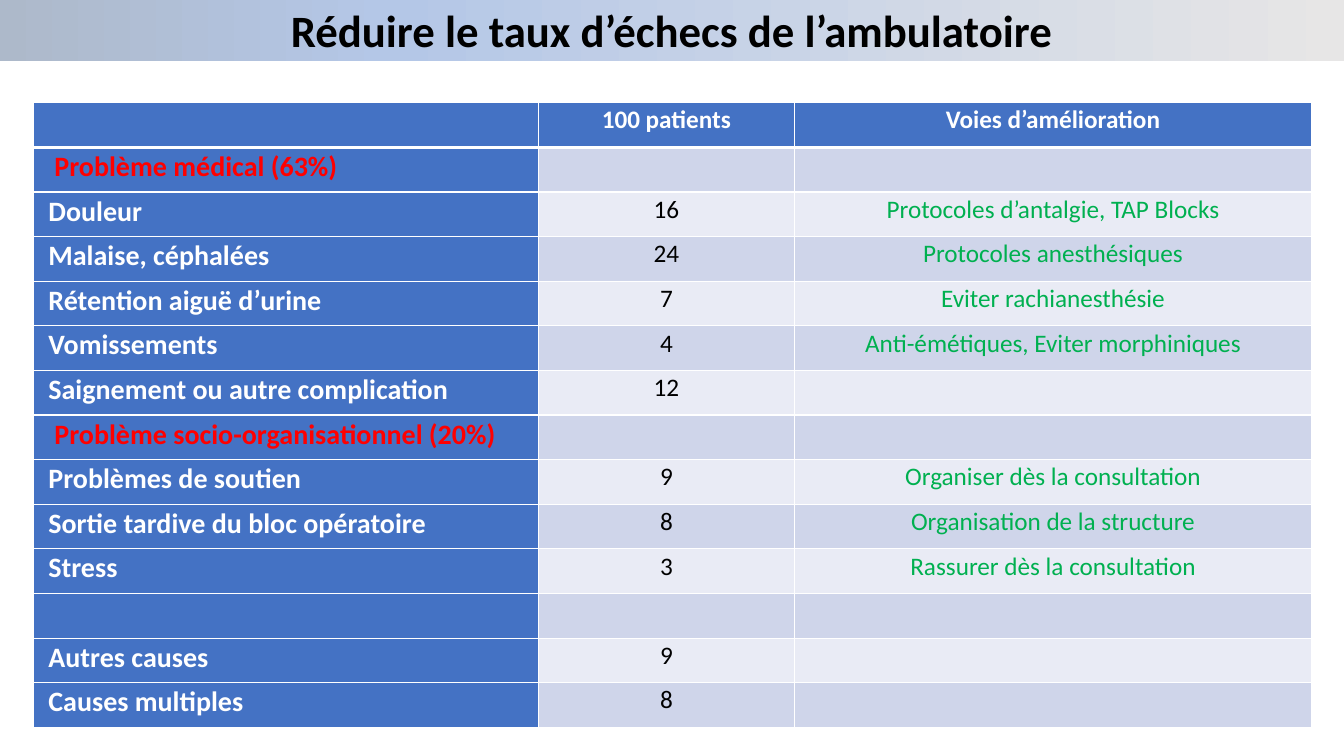
from lxml.etree import SubElement
from pptx import Presentation
from pptx.dml.color import RGBColor
from pptx.enum.text import MSO_ANCHOR, MSO_AUTO_SIZE, PP_ALIGN
from pptx.oxml.ns import qn
from pptx.util import Inches, Pt

CENTER, JUSTIFY = PP_ALIGN.CENTER, PP_ALIGN.JUSTIFY
MIDDLE, FIXED = MSO_ANCHOR.MIDDLE, MSO_AUTO_SIZE.NONE
COLORS = {"blue": "4472C4", "dark": "CFD5EA", "light": "E9EBF5", "white": "FFFFFF",
          "black": "000000", "red": "FF0000", "green": "00B050"}
FADE = [(0, "ADB9CA"), (29, "B4C7E7"), (100, "E7E6E6")]
FORMATS = {
    "title": {"name": "Calibri", "size": Pt(32), "bold": True, "color": "black"},
    "head": {"name": "Calibri", "size": Pt(18), "bold": True, "color": "white"},
    "group": {"name": "Calibri", "size": Pt(20), "bold": True, "color": "red"},
    "cause": {"name": "Calibri", "size": Pt(20), "bold": True, "color": "white"},
    "count": {"name": "Calibri", "size": Pt(18), "bold": False, "color": "black"},
    "remedy": {"name": "Calibri", "size": Pt(18), "bold": False, "color": "green"},
}
WIDTHS = [5.01, 2.54, 5.13]
ROWS = [
    ("", "100 patients", "Voies d’amélioration"),
    ("Problème médical (63%)", "", ""),
    ("Douleur", "16", "Protocoles d’antalgie, TAP Blocks"),
    ("Malaise, céphalées", "24", "Protocoles anesthésiques"),
    ("Rétention aiguë d’urine", "7", "Eviter rachianesthésie"),
    ("Vomissements", "4", "Anti-émétiques, Eviter morphiniques"),
    ("Saignement ou autre complication", "12", ""),
    ("Problème socio-organisationnel (20%)", "", ""),
    ("Problèmes de soutien", "9", "Organiser dès la consultation"),
    ("Sortie tardive du bloc opératoire", "8", "Organisation de la structure"),
    ("Stress", "3", "Rassurer dès la consultation"),
    ("", "", ""),
    ("Autres causes", "9", ""),
    ("Causes multiples", "8", ""),
]


def write(para, text, kind, align):
    """Put one formatted run in a paragraph."""
    para.alignment = align
    run = para.add_run()
    run.text = text
    for key, value in FORMATS[kind].items():
        if key == "color":
            run.font.color.rgb = RGBColor.from_string(COLORS[value])
        else:
            setattr(run.font, key, value)


def add_title(slide, left, top, width, height):
    """Place the title band with its horizontal fade."""
    title = slide.shapes.title
    box = {"left": left, "top": top, "width": width, "height": height}
    for key, value in box.items():
        setattr(title, key, Inches(value))
    title.fill.gradient()
    title.fill.gradient_angle = 0
    stops = title.element.spPr.find(".//" + qn("a:gsLst"))
    stops.clear()
    for place, color in FADE:
        stop = SubElement(stops, qn("a:gs"), pos=str(place * 1000))
        SubElement(stop, qn("a:srgbClr"), val=color)
    frame = title.text_frame
    frame.auto_size, frame.vertical_anchor, frame.word_wrap = FIXED, MIDDLE, True
    write(frame.paragraphs[0], "Réduire le taux d’échecs de l’ambulatoire", "title", CENTER)


def add_edges(cell, row):
    """Draw white cell borders, thicker below the header."""
    props = cell._tc.get_or_add_tcPr()
    thick = {(0, "B"), (1, "T")}
    for side in "LRTB":
        points = 3 if (row, side) in thick else 1
        line = SubElement(props, qn(f"a:ln{side}"), w=str(Pt(points)))
        fill = SubElement(line, qn("a:solidFill"))
        SubElement(fill, qn("a:srgbClr"), val=COLORS["white"])


def fill_cell(cell, text, row, col, group):
    """Colour one cell and write its text."""
    add_edges(cell, row)
    band = "blue" if row == 0 or col == 0 else "dark" if row % 2 else "light"
    cell.fill.solid()
    cell.fill.fore_color.rgb = RGBColor.from_string(COLORS[band])
    if not text:
        return
    cell.margin_left = Inches(0.21 if group else 0.15)
    cell.margin_right = Inches(0.15)
    cell.margin_top = cell.margin_bottom = 0
    kind = "head" if row == 0 else "group" if group else ("cause", "count", "remedy")[col]
    para = cell.text_frame.paragraphs[0]
    para.line_spacing = 1.07
    write(para, text, kind, CENTER if col else JUSTIFY)


def add_causes(slide, left, top, width, height):
    """Place the table of causes and remedies."""
    box = [Inches(value) for value in (left, top, width, height)]
    table = slide.shapes.add_table(len(ROWS), len(WIDTHS), *box).table
    table.first_col = True
    for column, share in zip(table.columns, WIDTHS):
        column.width = Inches(width * share / sum(WIDTHS))
    for row, texts in enumerate(ROWS):
        group = texts[0].startswith("Problème ")
        for col, text in enumerate(texts):
            fill_cell(table.cell(row, col), text, row, col, group)


def main():
    """Build and save the slide."""
    deck = Presentation()
    deck.slide_width, deck.slide_height = Inches(13.33), Inches(7.5)
    slide = deck.slides.add_slide(deck.slide_layouts[5])
    add_title(slide, 0, -0.03, 13.33, 0.64)
    add_causes(slide, 0.33, 1.02, 12.68, 6.2)
    deck.save("out.pptx")


if __name__ == "__main__":
    main()
